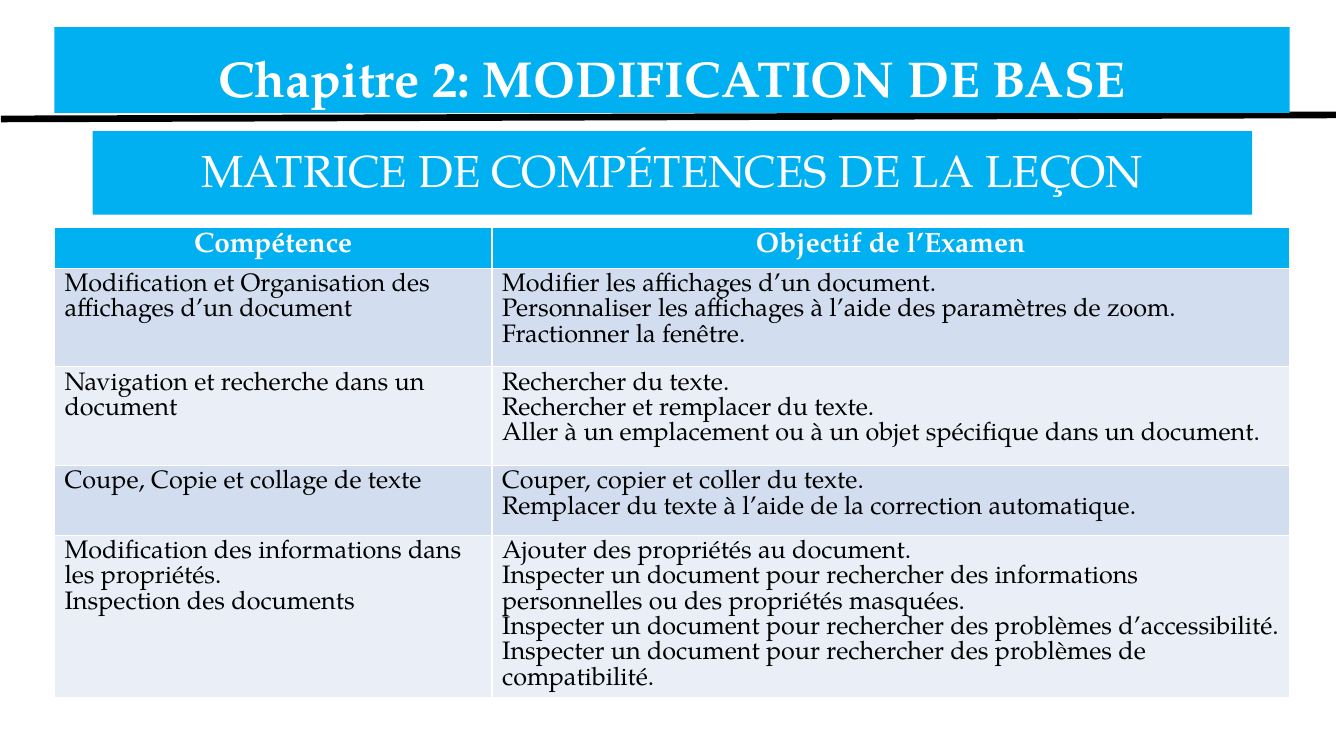
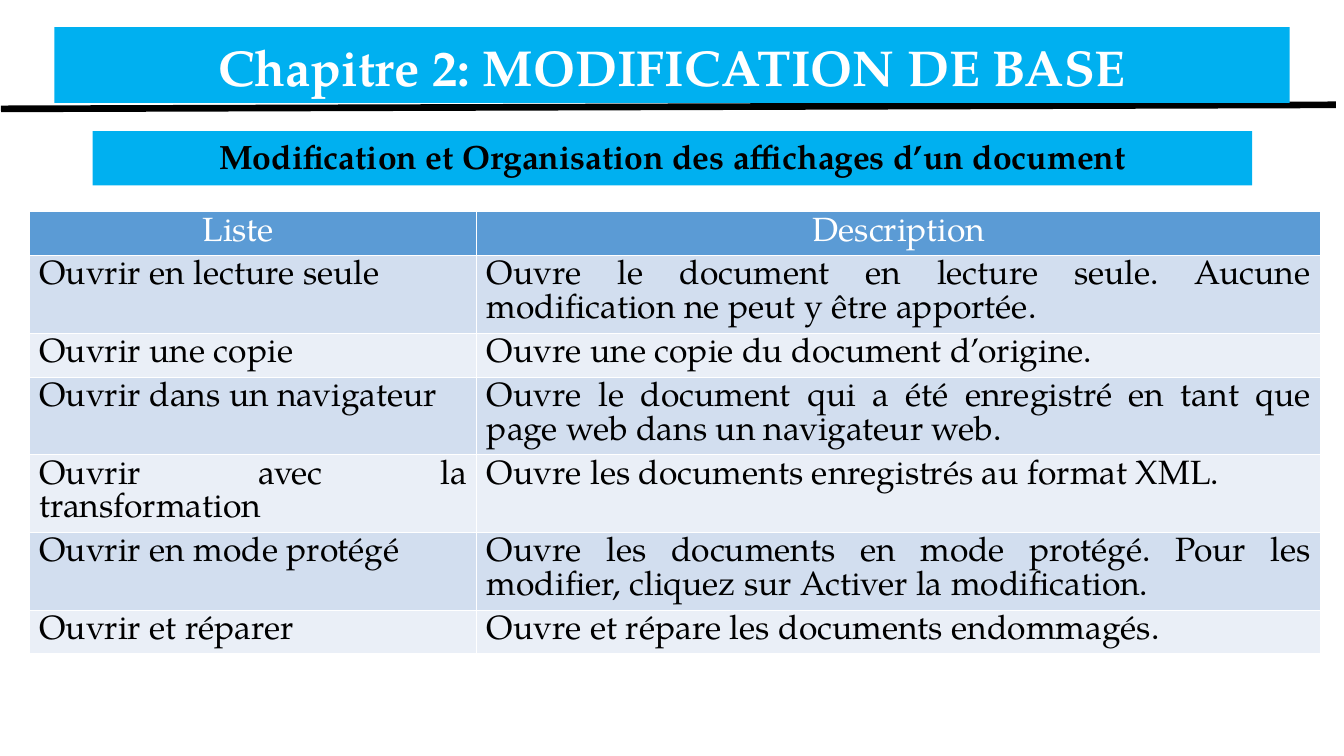
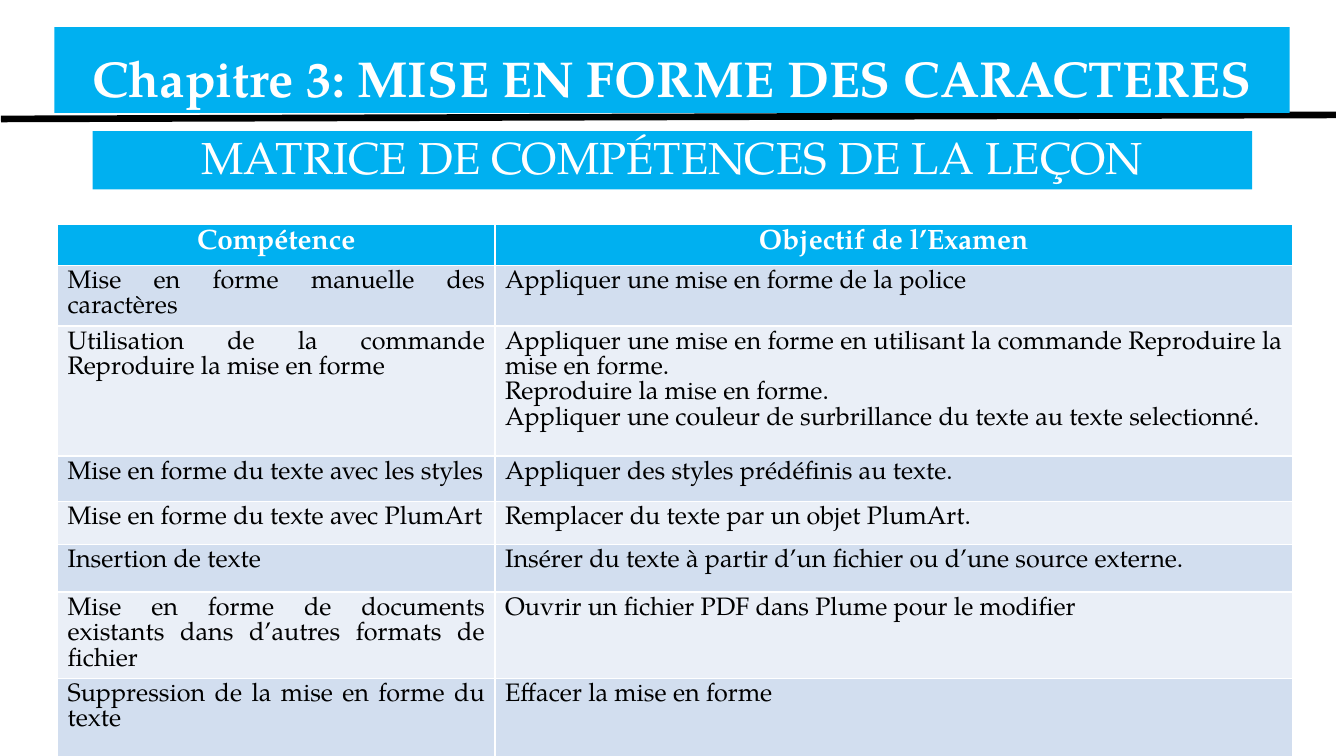
import pptx
import pptx.dml.color
import pptx.enum.shapes
import pptx.enum.text
import pptx.util
from lxml import etree
import lxml.etree
from pptx.util import Inches

FONT = "TeX Gyre Pagella"
COLORS = {
    "band": "00B0F0",
    "header": "5B9BD5",
    "odd": "D2DEEF",
    "even": "EAEFF7",
    "white": "FFFFFF",
    "black": "000000",
}
ALIGN = pptx.enum.text.PP_ALIGN
ANCHOR = pptx.enum.text.MSO_ANCHOR
MATRIX_TITLE = "MATRICE DE COMPÉTENCES DE LA LEÇON"
MATRIX_HEADER = ("Compétence", "Objectif de l’Examen")
MATRIX_COLS = (4.34, 7.91)

EDITING_SKILLS = [
    ("Modification et Organisation des affichages d’un document",
     "Modifier les affichages d’un document.\n"
     "Personnaliser les affichages à l’aide des paramètres de zoom.\n"
     "Fractionner la fenêtre."),
    ("Navigation et recherche dans un document",
     "Rechercher du texte.\n"
     "Rechercher et remplacer du texte.\n"
     "Aller à un emplacement ou à un objet spécifique dans un document."),
    ("Coupe, Copie et collage de texte",
     "Couper, copier et coller du texte.\n"
     "Remplacer du texte à l’aide de la correction automatique."),
    ("Modification des informations dans les propriétés.\n"
     "Inspection des documents",
     "Ajouter des propriétés au document.\n"
     "Inspecter un document pour rechercher des informations personnelles "
     "ou des propriétés masquées.\n"
     "Inspecter un document pour rechercher des problèmes d’accessibilité.\n"
     "Inspecter un document pour rechercher des problèmes de compatibilité."),
]
OPEN_MODES = [
    ("Ouvrir en lecture seule",
     "Ouvre le document en lecture seule. Aucune modification ne peut y être apportée."),
    ("Ouvrir une copie", "Ouvre une copie du document d’origine."),
    ("Ouvrir dans un navigateur",
     "Ouvre le document qui a été enregistré en tant que page web dans un navigateur web."),
    ("Ouvrir avec la transformation", "Ouvre les documents enregistrés au format XML."),
    ("Ouvrir en mode protégé",
     "Ouvre les documents en mode protégé. Pour les modifier, cliquez sur Activer la modification."),
    ("Ouvrir et réparer", "Ouvre et répare les documents endommagés."),
]
FORMATTING_SKILLS = [
    ("Mise en forme manuelle des caractères", "Appliquer une mise en forme de la police"),
    ("Utilisation de la commande Reproduire la mise en forme",
     "Appliquer une mise en forme en utilisant la commande Reproduire la mise en forme.\n"
     "Reproduire la mise en forme.\n"
     "Appliquer une couleur de surbrillance du texte au texte selectionné."),
    ("Mise en forme du texte avec les styles", "Appliquer des styles prédéfinis au texte."),
    ("Mise en forme du texte avec PlumArt", "Remplacer du texte par un objet PlumArt."),
    ("Insertion de texte", "Insérer du texte à partir d’un fichier ou d’une source externe."),
    ("Mise en forme de documents existants dans d’autres formats de fichier",
     "Ouvrir un fichier PDF dans Plume pour le modifier"),
    ("Suppression de la mise en forme du texte", "Effacer la mise en forme"),
]


def rgb(name):
    return pptx.dml.color.RGBColor.from_string(COLORS[name])


def write(tf, text, size=18, color="black", bold=False, align=ALIGN.LEFT, spacing=None):
    for i, line in enumerate(text.split("\n")):
        p = tf.add_paragraph() if i else tf.paragraphs[0]
        p.alignment = align
        if spacing:
            p.line_spacing = spacing
        r = p.add_run()
        r.text = line
        r.font.name = FONT
        r.font.size = pptx.util.Pt(size)
        r.font.bold = bold
        r.font.color.rgb = rgb(color)


def add_band(s, box, text, anchor=ANCHOR.MIDDLE, **fmt):
    sp = s.shapes.add_shape(pptx.enum.shapes.MSO_SHAPE.RECTANGLE, *map(Inches, box))
    sp.shadow.inherit = False
    sp.fill.solid()
    sp.fill.fore_color.rgb = rgb("band")
    sp.line.fill.background()
    tf = sp.text_frame
    tf.word_wrap = True
    tf.vertical_anchor = anchor
    write(tf, text, align=ALIGN.CENTER, spacing=0.9, **fmt)


def add_rule(s, y):
    line = s.shapes.add_connector(
        pptx.enum.shapes.MSO_CONNECTOR.STRAIGHT,
        Inches(0.01), Inches(y), Inches(13.25), Inches(y - 0.04))
    line.line.width = pptx.util.Pt(4.75)
    line.line.color.rgb = rgb("black")
    etree.SubElement(line._element.spPr, pptx.oxml.ns.qn("a:effectLst"))


def add_heading(s, title, subtitle, title_height, subtitle_height, size=32, color="white", bold=False):
    add_rule(s, 0.33 + title_height)
    add_band(s, (0.54, 0.27, 12.25, title_height), title,
             anchor=ANCHOR.BOTTOM, size=36, color="white", bold=True)
    add_band(s, (0.92, 1.3, 11.5, subtitle_height), subtitle,
             size=size, color=color, bold=bold)


def add_grid(s, left, top, cols, heights, header, rows, header_fill="band",
             header_size=20, header_bold=True, size=18, align=ALIGN.LEFT):
    frame = s.shapes.add_table(len(heights), len(cols), Inches(left), Inches(top),
                               Inches(sum(cols)), Inches(sum(heights)))
    table = frame.table
    for col, width in zip(table.columns, cols):
        col.width = Inches(width)
    for i, (height, texts) in enumerate(zip(heights, [header] + rows)):
        table.rows[i].height = Inches(height)
        for cell, text in zip(table.rows[i].cells, texts):
            cell.fill.solid()
            if i == 0:
                cell.fill.fore_color.rgb = rgb(header_fill)
                write(cell.text_frame, text, size=header_size, color="white",
                      bold=header_bold, align=ALIGN.CENTER)
            else:
                cell.fill.fore_color.rgb = rgb("odd" if i % 2 else "even")
                write(cell.text_frame, text, size=size, align=align)
    return table


def editing_matrix(s):
    add_heading(s, "Chapitre 2: MODIFICATION DE BASE", MATRIX_TITLE, 0.85, 0.83)
    add_grid(s, 0.54, 2.26, MATRIX_COLS, (0.4, 0.98, 0.98, 0.69, 1.57),
             MATRIX_HEADER, EDITING_SKILLS)


def open_modes(s):
    add_heading(s, "Chapitre 2: MODIFICATION DE BASE",
                "Modification et Organisation des affichages d’un document",
                0.75, 0.54, size=24, color="black", bold=True)
    table = add_grid(s, 0.29, 2.1, (4.44, 8.37), [0.41] * 7,
                     ("Liste", "Description"), OPEN_MODES, header_fill="header",
                     header_size=24, header_bold=False, size=24, align=ALIGN.JUSTIFY)
    table.cell(0, 0).margin_right = Inches(0.4)


def formatting_matrix(s):
    add_heading(s, "Chapitre 3: MISE EN FORME DES CARACTERES", MATRIX_TITLE, 0.85, 0.58)
    add_grid(s, 0.57, 2.23, MATRIX_COLS, (0.4, 0.4, 1.29, 0.45, 0.43, 0.47, 0.37, 1.03),
             MATRIX_HEADER, FORMATTING_SKILLS, align=ALIGN.JUSTIFY)


def main():
    prs = pptx.Presentation()
    prs.slide_width = Inches(13.33)
    prs.slide_height = Inches(7.5)
    for build in (editing_matrix, open_modes, formatting_matrix):
        build(prs.slides.add_slide(prs.slide_layouts[6]))
    prs.save("out.pptx")


if __name__ == "__main__":
    main()
